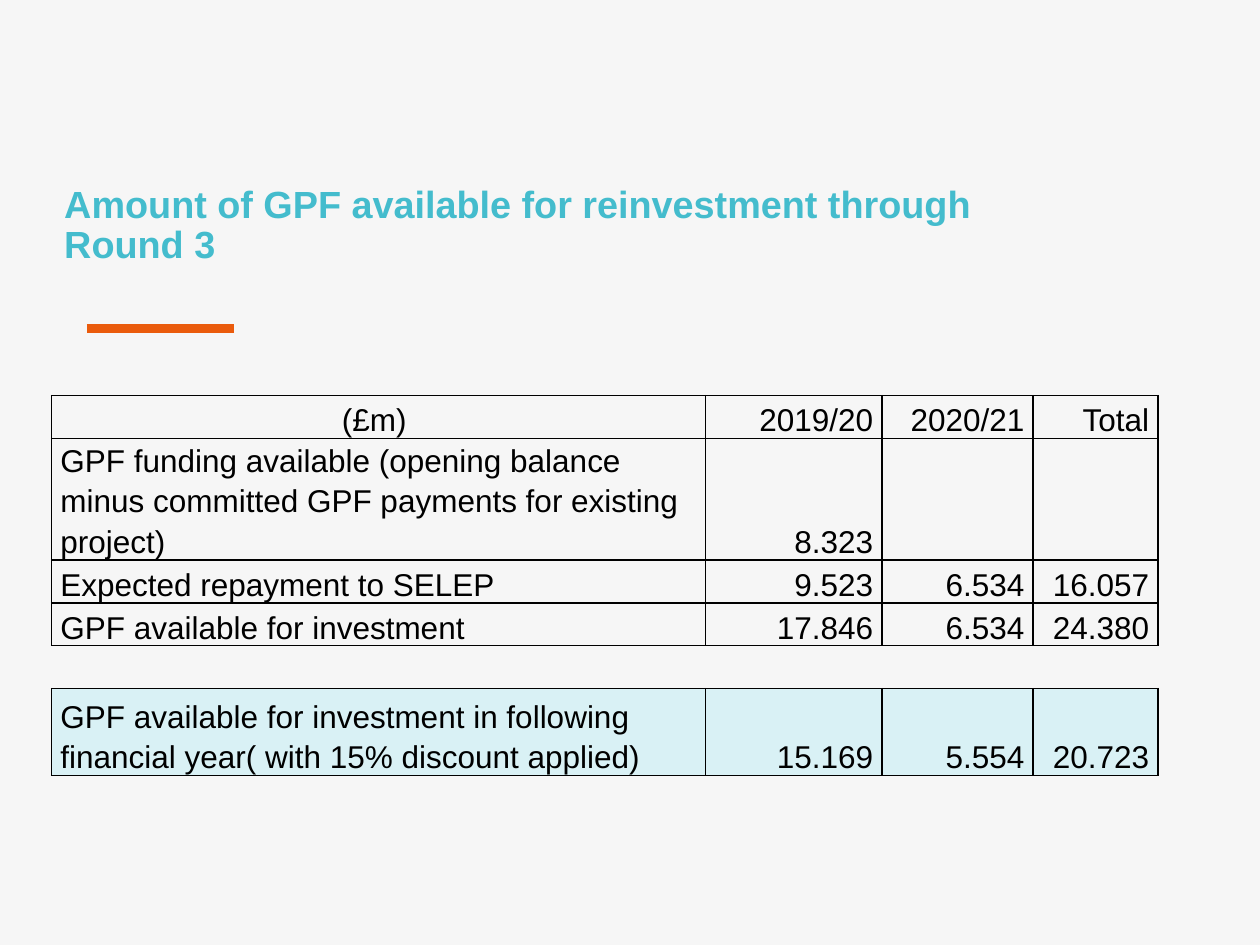
from lxml import etree
from pptx import Presentation
from pptx import util as u
from pptx.dml.color import RGBColor
from pptx.enum import shapes, text
from pptx.oxml import ns


def colour(value):
    return RGBColor.from_string(value)


class SlideBuilder:
    font = "Arial"
    background = "F6F6F6"
    title_colour = "44BCCD"
    accent = "EA5B0C"
    highlight = "D9F1F5"
    ink = "000000"

    def __init__(self, deck):
        self.slide = deck.slides.add_slide(deck.slide_layouts[5])
        fill = self.slide.background.fill
        fill.solid()
        fill.fore_color.rgb = colour(self.background)

    def title(self, wording, left, top, width, height):
        box = self.slide.shapes.title
        box.left, box.top = u.Inches(left), u.Inches(top)
        box.width, box.height = u.Inches(width), u.Inches(height)
        frame = box.text_frame
        frame.text = wording
        frame.word_wrap = True
        frame.auto_size = text.MSO_AUTO_SIZE.NONE
        frame.vertical_anchor = text.MSO_ANCHOR.BOTTOM
        para = frame.paragraphs[0]
        para.alignment = text.PP_ALIGN.LEFT
        para.line_spacing = 0.9
        self.style(para, 21.6, self.title_colour, bold=True)

    def rule(self, left, right, y, weight):
        line = self.slide.shapes.add_connector(
            shapes.MSO_CONNECTOR.STRAIGHT,
            u.Inches(left), u.Inches(y), u.Inches(right), u.Inches(y))
        line.line.color.rgb = colour(self.accent)
        line.line.width = u.Pt(weight)
        etree.SubElement(line._element.spPr, ns.qn("a:effectLst"))

    def table(self, rows, left, top, widths, heights):
        frame = self.slide.shapes.add_table(
            len(rows), len(widths), u.Inches(left), u.Inches(top),
            u.Inches(sum(widths)), u.Inches(sum(heights)))
        table = frame.table
        table.first_row = table.horz_banding = False
        for column, width in zip(table.columns, widths):
            column.width = u.Inches(width)
        for row, height in zip(table.rows, heights):
            row.height = u.Inches(height)
        last = len(rows) - 1
        for r, values in enumerate(rows):
            fill = self.highlight if r == last else self.background
            for c, value in enumerate(values or [""] * len(widths)):
                align = text.PP_ALIGN.RIGHT
                if c == 0:
                    align = text.PP_ALIGN.LEFT if r else text.PP_ALIGN.CENTER
                self.cell(table.cell(r, c), value, align, fill if values else None)

    def cell(self, cell, wording, align, fill):
        # A cell without fill is a spacer: it has no side borders
        self.border(cell, "TB" if fill is None else "LRTB")
        if fill is None:
            cell.fill.background()
        else:
            cell.fill.solid()
            cell.fill.fore_color.rgb = colour(fill)
        cell.margin_left = cell.margin_right = u.Inches(0.07)
        cell.margin_top = cell.margin_bottom = 0
        cell.vertical_anchor = text.MSO_ANCHOR.BOTTOM
        cell.text = wording
        para = cell.text_frame.paragraphs[0]
        para.alignment = align
        para.line_spacing = 1.15
        self.style(para, 18, self.ink)

    def border(self, cell, drawn):
        properties = cell._tc.get_or_add_tcPr()
        for side in "LRTB":
            edge = etree.SubElement(properties, ns.qn(f"a:ln{side}"), w=str(u.Pt(1)))
            if side in drawn:
                paint = etree.SubElement(edge, ns.qn("a:solidFill"))
                etree.SubElement(paint, ns.qn("a:srgbClr"), val=self.ink)
            else:
                etree.SubElement(edge, ns.qn("a:noFill"))

    def style(self, para, size, shade, bold=False):
        para.font.name = self.font
        para.font.size = u.Pt(size)
        para.font.bold = bold
        para.font.color.rgb = colour(shade)


# None marks the spacer row
FUNDING = [
    ["(£m) ", "2019/20", "2020/21", "Total"],
    ["GPF funding available (opening balance minus committed GPF payments "
     "for existing project)", "8.323", "", ""],
    ["Expected repayment to SELEP", "9.523", "6.534", "16.057"],
    ["GPF available for investment", "17.846", "6.534", "24.380"],
    None,
    ["GPF available for investment in following financial year( with 15% "
     "discount applied)", "15.169", "5.554", "20.723"],
]


def main():
    deck = Presentation()
    deck.slide_width, deck.slide_height = u.Inches(10), u.Inches(7.5)
    page = SlideBuilder(deck)

    # Heading and accent rule
    page.rule(0.69, 1.86, 2.61, 5)
    page.title("Amount of GPF available for reinvestment through Round 3",
               0.41, 1.62, 8.37, 0.55)

    # Funding table
    page.table(FUNDING, 0.41, 3.14, widths=[5.19, 1.4, 1.2, 0.99],
               heights=[0.34, 0.64, 0.34, 0.34, 0.34, 0.69])

    deck.save("out.pptx")


if __name__ == "__main__":
    main()
